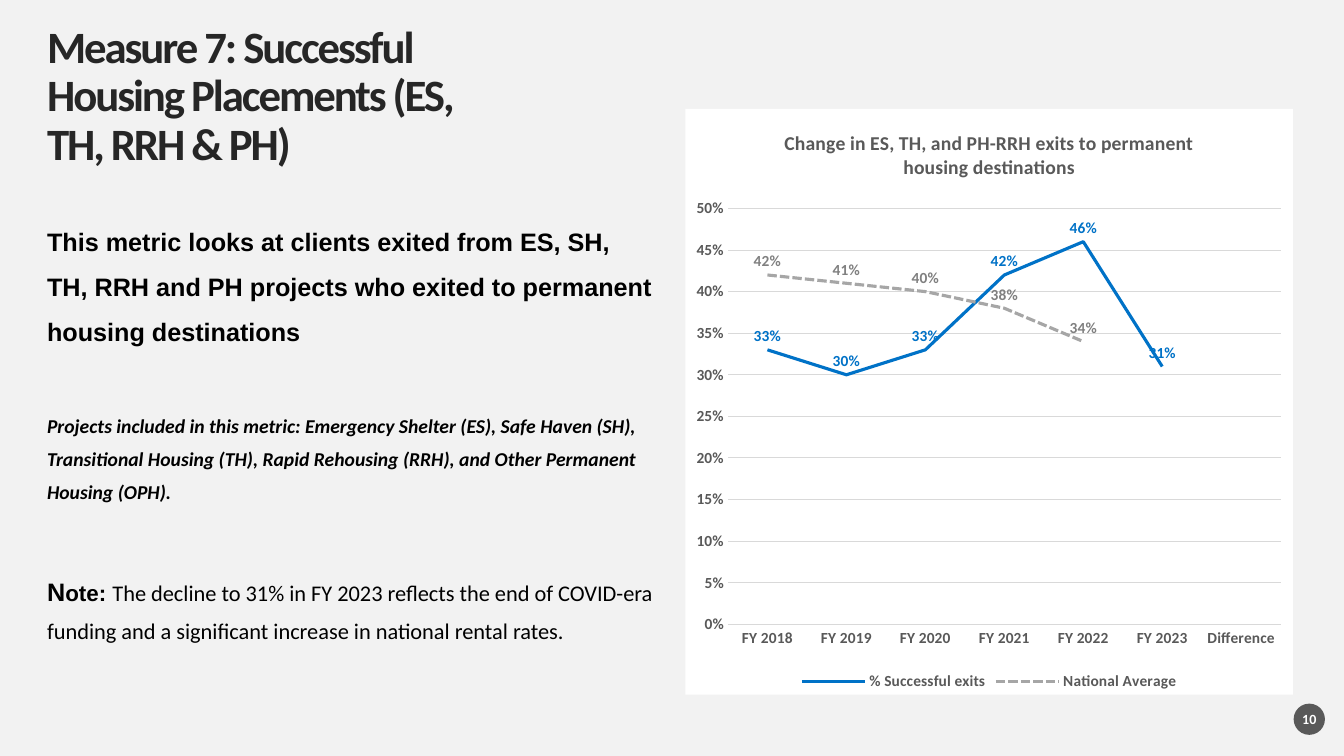
import dataclasses
import typing

import lxml.etree
import pptx
import pptx.chart.data
import pptx.dml.color
import pptx.enum.chart
import pptx.enum.dml
import pptx.enum.shapes
import pptx.enum.text
import pptx.oxml
import pptx.oxml.ns
import pptx.util

WIDTH = pptx.util.Inches(13.33)
HEIGHT = pptx.util.Inches(7.5)


@dataclasses.dataclass(frozen=True)
class Theme:
    background: str = "F2F2F2"
    title: str = "262626"
    text: str = "000000"
    white: str = "FFFFFF"
    axis: str = "595959"
    grid: str = "D9D9D9"
    exits: str = "0072C7"
    average: str = "A6A6A6"
    average_label: str = "808080"
    sans: str = "Calibri"
    lead: str = "Arial"
    title_size: float = 32
    lead_size: float = 18
    note_size: float = 16
    small_size: float = 14
    label_size: float = 11
    badge_size: float = 10


THEME = Theme()


@dataclasses.dataclass(frozen=True)
class Area:
    """A rectangle in percent of the slide's width and height."""
    left: float
    top: float
    width: float
    height: float

    def lengths(self) -> tuple[int, int, int, int]:
        return (int(WIDTH * self.left / 100), int(HEIGHT * self.top / 100),
                int(WIDTH * self.width / 100), int(HEIGHT * self.height / 100))


@dataclasses.dataclass(frozen=True)
class Span:
    text: str
    size: float
    face: str = THEME.sans
    bold: bool = True
    italic: bool = False


@dataclasses.dataclass(frozen=True)
class Para:
    spans: tuple[Span, ...]
    line_spacing: float = 1.4
    before: float = 0


@dataclasses.dataclass(frozen=True)
class Trend:
    name: str
    values: tuple[typing.Optional[float], ...]
    line: str
    label: str
    dash: typing.Optional[pptx.enum.dml.MSO_LINE_DASH_STYLE] = None


TITLE_AREA = Area(3.5, 3.33, 33.5, 19.1)
BODY_AREA = Area(3.5, 27.87, 45.2, 62.4)
CHART_AREA = Area(51, 14.4, 45.2, 77.5)
BADGE_AREA = Area(96.25, 93.07, 2.33, 4.13)

TITLE = "Measure 7: Successful Housing Placements (ES, TH, RRH & PH)"
BODY = (
    Para((Span("This metric looks at clients exited from ES, SH, TH, RRH and PH projects "
               "who exited to permanent housing destinations",
               THEME.lead_size, THEME.lead),), 1.5),
    Para((Span("Projects included in this metric: Emergency Shelter (ES), Safe Haven (SH), "
               "Transitional Housing (TH), Rapid Rehousing (RRH), and Other Permanent "
               "Housing (OPH).", THEME.small_size, italic=True),), before=41),
    Para((Span("N", THEME.lead_size, THEME.lead),
          Span("ote: ", THEME.note_size, THEME.lead),
          Span("The decline to 31% in FY 2023 reflects the end of COVID-era funding and a "
               "significant increase in national rental rates.",
               THEME.note_size, bold=False)), before=44),
)
CHART_TITLE = "Change in ES, TH, and PH-RRH exits to permanent housing destinations"
CATEGORIES = [f"FY {year}" for year in range(2018, 2024)] + ["Difference"]
TRENDS = (
    Trend("% Successful exits", (0.33, 0.30, 0.33, 0.42, 0.46, 0.31, None),
          THEME.exits, THEME.exits),
    Trend("National Average", (0.42, 0.41, 0.40, 0.38, 0.34, None, None),
          THEME.average, THEME.average_label, pptx.enum.dml.MSO_LINE_DASH_STYLE.SQUARE_DOT),
)


def rgb(color: str) -> pptx.dml.color.RGBColor:
    return pptx.dml.color.RGBColor.from_string(color)


def style_font(font: typing.Any, size: float, color: str, face: str = THEME.sans,
               bold: bool = True, italic: bool = False) -> None:
    font.size, font.name = pptx.util.Pt(size), face
    font.bold, font.italic = bold, italic
    font.color.rgb = rgb(color)


def style_line(line: typing.Any, color: str, width: float) -> None:
    line.color.rgb = rgb(color)
    line.width = pptx.util.Pt(width)


def prepare_frame(shape: typing.Any, anchor: pptx.enum.text.MSO_ANCHOR) -> typing.Any:
    """Give the shape's text frame no margins, wrapping and a fixed size."""
    frame = shape.text_frame
    frame.margin_left = frame.margin_right = frame.margin_top = frame.margin_bottom = 0
    frame.word_wrap = True
    frame.auto_size = pptx.enum.text.MSO_AUTO_SIZE.NONE
    frame.vertical_anchor = anchor
    return frame


def place(shape: typing.Any, area: Area) -> None:
    shape.left, shape.top, shape.width, shape.height = area.lengths()


def fill_title(shape: typing.Any) -> None:
    place(shape, TITLE_AREA)
    frame = prepare_frame(shape, pptx.enum.text.MSO_ANCHOR.MIDDLE)
    frame.text = TITLE
    para = frame.paragraphs[0]
    para.alignment = pptx.enum.text.PP_ALIGN.LEFT
    para.line_spacing = 0.9
    span = para.runs[0]
    style_font(span.font, THEME.title_size, THEME.title)
    span.font._element.set("spc", "-150")


def fill_body(shape: typing.Any) -> None:
    place(shape, BODY_AREA)
    frame = prepare_frame(shape, pptx.enum.text.MSO_ANCHOR.TOP)
    for index, content in enumerate(BODY):
        para = frame.add_paragraph() if index else frame.paragraphs[0]
        properties = para._p.get_or_add_pPr()
        properties.set("marL", "0")
        properties.set("indent", "0")
        lxml.etree.SubElement(properties, pptx.oxml.ns.qn("a:buNone"))
        para.line_spacing = content.line_spacing
        para.space_before = pptx.util.Pt(content.before)
        for part in content.spans:
            span = para.add_run()
            span.text = part.text
            style_font(span.font, part.size, THEME.text, part.face, part.bold, part.italic)


def add_badge(page: typing.Any) -> None:
    badge = page.shapes.add_shape(pptx.enum.shapes.MSO_SHAPE.OVAL, *BADGE_AREA.lengths())
    badge.shadow.inherit = False
    badge.fill.solid()
    badge.fill.fore_color.rgb = rgb(THEME.axis)
    badge.line.fill.background()
    frame = prepare_frame(badge, pptx.enum.text.MSO_ANCHOR.MIDDLE)
    frame.text = "10"
    frame.paragraphs[0].alignment = pptx.enum.text.PP_ALIGN.CENTER
    style_font(frame.paragraphs[0].runs[0].font, THEME.badge_size, THEME.white)


def finish_chart(chart: typing.Any) -> None:
    """Set the white background and the plot's place, in shares of the chart."""
    names = pptx.oxml.ns.nsdecls("c", "a")
    chart._chartSpace.chart.addnext(pptx.oxml.parse_xml(
        f'<c:spPr {names}><a:solidFill><a:srgbClr val="{THEME.white}"/></a:solidFill>'
        '<a:ln><a:noFill/></a:ln></c:spPr>'))
    plot = chart._chartSpace.chart.plotArea
    for layout in plot.findall(pptx.oxml.ns.qn("c:layout")):
        plot.remove(layout)
    shares = "".join(f'<c:{key} val="{share}"/>' for key, share in
                     (("x", 0.07), ("y", 0.17), ("w", 0.91), ("h", 0.71)))
    plot.insert(0, pptx.oxml.parse_xml(
        f'<c:layout {names}><c:manualLayout><c:layoutTarget val="inner"/>'
        f'<c:xMode val="edge"/><c:yMode val="edge"/>{shares}</c:manualLayout></c:layout>'))


def add_trend_chart(page: typing.Any) -> None:
    data = pptx.chart.data.CategoryChartData(number_format="0%")
    data.categories = CATEGORIES
    for trend in TRENDS:
        data.add_series(trend.name, trend.values)
    chart = page.shapes.add_chart(pptx.enum.chart.XL_CHART_TYPE.LINE,
                                  *CHART_AREA.lengths(), data).chart
    style_font(chart.font, THEME.label_size, THEME.axis)
    chart.has_title = True
    chart.chart_title.text_frame.text = CHART_TITLE
    style_font(chart.chart_title.text_frame.paragraphs[0].runs[0].font,
               THEME.small_size, THEME.axis)
    chart.has_legend = True
    chart.legend.position = pptx.enum.chart.XL_LEGEND_POSITION.BOTTOM
    chart.legend.include_in_layout = False
    for axis in (chart.category_axis, chart.value_axis):
        axis.major_tick_mark = axis.minor_tick_mark = pptx.enum.chart.XL_TICK_MARK.NONE
    style_line(chart.category_axis.format.line, THEME.grid, 0.75)
    values = chart.value_axis
    values.minimum_scale, values.maximum_scale, values.major_unit = 0, 0.5, 0.05
    values.format.line.fill.background()
    style_line(values.major_gridlines.format.line, THEME.grid, 0.75)
    values.tick_labels.number_format = "0%"
    values.tick_labels.number_format_is_linked = False
    chart.plots[0].vary_by_categories = False
    for trend, series in zip(TRENDS, chart.plots[0].series):
        series.smooth = False
        style_line(series.format.line, trend.line, 2.25)
        if trend.dash:
            series.format.line.dash_style = trend.dash
        labels = series.data_labels
        labels.show_value = True
        labels.position = pptx.enum.chart.XL_LABEL_POSITION.ABOVE
        labels.number_format, labels.number_format_is_linked = "0%", False
        style_font(labels.font, THEME.label_size, trend.label)
    finish_chart(chart)


def main() -> None:
    deck = pptx.Presentation()
    deck.slide_width, deck.slide_height = WIDTH, HEIGHT
    page = deck.slides.add_slide(deck.slide_layouts[1])
    page.background.fill.solid()
    page.background.fill.fore_color.rgb = rgb(THEME.background)
    fill_title(page.shapes.title)
    fill_body(page.placeholders[1])
    add_badge(page)
    add_trend_chart(page)
    deck.save("out.pptx")


if __name__ == "__main__":
    main()
